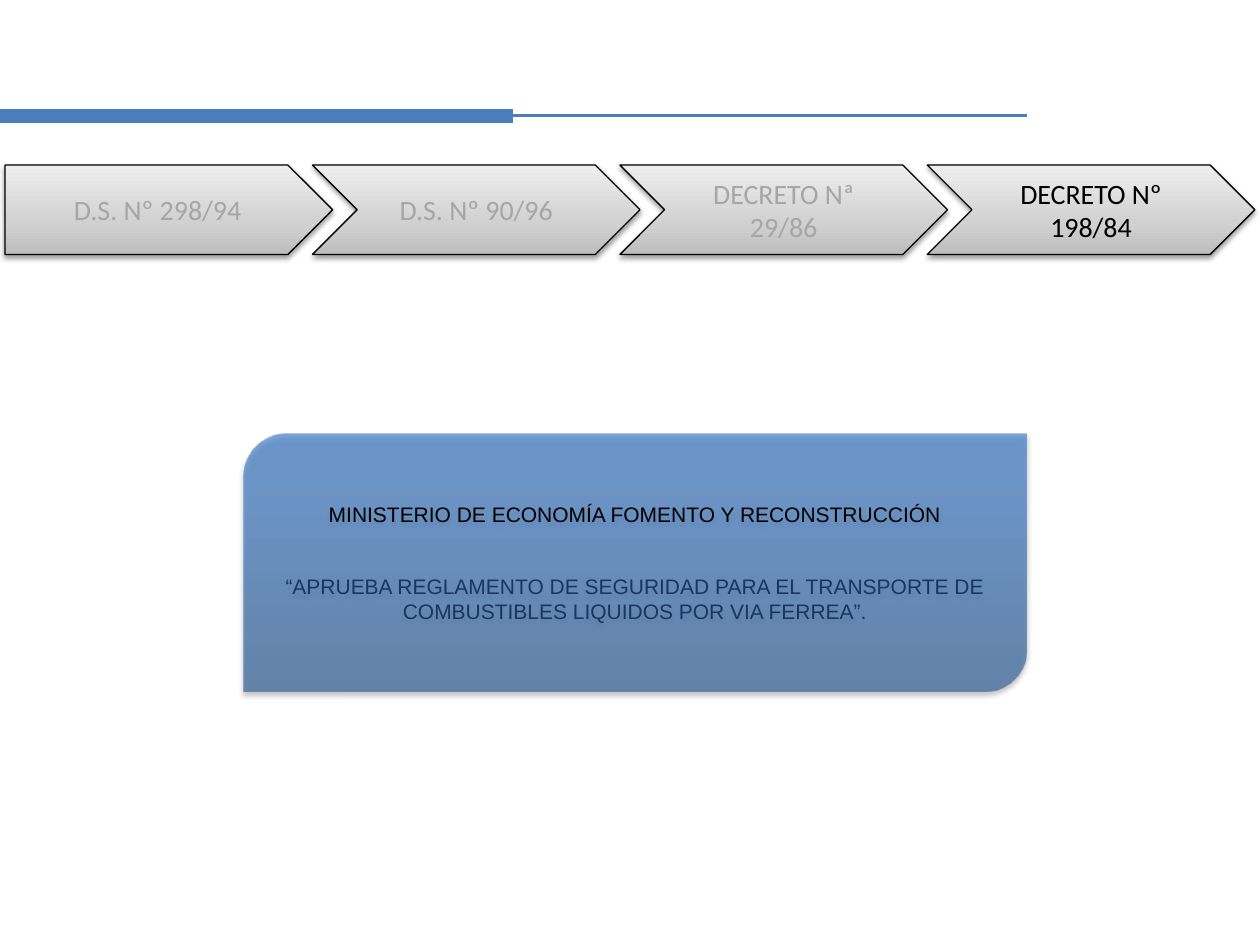
from lxml.etree import SubElement
from pptx import Presentation
from pptx.dml.color import RGBColor
from pptx.enum.shapes import MSO_CONNECTOR as Connector, MSO_SHAPE as Shape
from pptx.enum.text import MSO_ANCHOR as Anchor, PP_ALIGN as Align
from pptx.oxml.ns import qn
from pptx.util import Emu, Inches, Pt

BLACK = RGBColor(0x00, 0x00, 0x00)
MUTED = RGBColor(0xA6, 0xA6, 0xA6)
NAVY = RGBColor(0x17, 0x37, 0x5E)
RULE_BLUE = RGBColor(0x4B, 0x7E, 0xBC)
GREY_STOPS = [
    (0, RGBColor(0xBD, 0xBD, 0xBD)),
    (35, RGBColor(0xD1, 0xD1, 0xD1)),
    (100, RGBColor(0xEE, 0xEE, 0xEE)),
]
BLUE_STOPS = [
    (0, RGBColor(0x2F, 0x5F, 0x99)),
    (80, RGBColor(0x3D, 0x7C, 0xC7)),
    (100, RGBColor(0x3A, 0x7C, 0xCB)),
]

RULE_TOP, RULE_END = 0.92, 8.15
STEP_LEFT, STEP_TOP, STEP_PITCH = 0.04, 1.31, 2.44
STEP_WIDTH, STEP_HEIGHT = 2.6, 0.71
STEPS = ["D.S. Nº 298/94", "D.S. Nº 90/96", "DECRETO Nª 29/86", "DECRETO Nº 198/84"]
CARD = (1.93, 3.44, 6.22, 2.05)
CARD_TEXT = [
    ("MINISTERIO DE ECONOMÍA FOMENTO Y RECONSTRUCCIÓN", BLACK),
    ("“APRUEBA REGLAMENTO DE SEGURIDAD PARA EL TRANSPORTE DE "
     "COMBUSTIBLES LIQUIDOS POR VIA FERREA”.", NAVY),
]


def add_color(parent, color, alpha):
    node = SubElement(parent, qn("a:srgbClr"), val=str(color))
    if alpha < 100:
        SubElement(node, qn("a:alpha"), val=str(alpha * 1000))


def fill_upward(shape, stops, alpha=100):
    shape.fill.gradient()
    gradient = shape._element.spPr.find(qn("a:gradFill"))
    for child in list(gradient):
        gradient.remove(child)
    stop_list = SubElement(gradient, qn("a:gsLst"))
    for position, color in stops:
        stop = SubElement(stop_list, qn("a:gs"), pos=str(position * 1000))
        add_color(stop, color, alpha)
    SubElement(gradient, qn("a:lin"), ang=str(270 * 60000), scaled="0")


def drop_shadow(shape, alpha, blur, distance):
    shape.shadow.inherit = False
    effects = shape._element.spPr.find(qn("a:effectLst"))
    shadow = SubElement(
        effects, qn("a:outerShdw"), blurRad=str(Pt(blur)), dist=str(Pt(distance)),
        dir=str(90 * 60000), rotWithShape="0")
    add_color(shadow, BLACK, alpha)


def write_centered(shape, lines, font, size, gap=0):
    frame = shape.text_frame
    frame.word_wrap = True
    frame.vertical_anchor = Anchor.MIDDLE
    frame.text = "\n".join(text for text, color in lines)
    for index, (para, (text, color)) in enumerate(zip(frame.paragraphs, lines)):
        para.alignment = Align.CENTER
        para.space_before = Pt(gap if index else 0)
        span = para.runs[0]
        span.font.name = font
        span.font.size = Pt(size)
        span.font.color.rgb = color


def add_rule(page, end, weight):
    rule = page.shapes.add_connector(
        Connector.STRAIGHT, Emu(0), Inches(RULE_TOP), Inches(end), Inches(RULE_TOP))
    rule.line.color.rgb = RULE_BLUE
    rule.line.width = Pt(weight)
    SubElement(rule._element.spPr, qn("a:effectLst"))


def add_step(page, column, label, color):
    kind = Shape.CHEVRON if column else Shape.PENTAGON
    left = STEP_LEFT + column * STEP_PITCH
    step = page.shapes.add_shape(
        kind, *map(Inches, (left, STEP_TOP, STEP_WIDTH, STEP_HEIGHT)))
    fill_upward(step, GREY_STOPS)
    step.line.color.rgb = BLACK
    step.line.width = Pt(0.75)
    drop_shadow(step, 38, 3.1, 1.6)
    write_centered(step, [(label, color)], "Calibri", 16)


def add_card(page):
    card = page.shapes.add_shape(Shape.ROUND_2_DIAG_RECTANGLE, *map(Inches, CARD))
    fill_upward(card, BLUE_STOPS, 65)
    card.line.fill.background()
    drop_shadow(card, 35, 3.1, 1.8)
    write_centered(card, CARD_TEXT, "Arial", 12, gap=27)


def main():
    deck = Presentation()
    deck.slide_width, deck.slide_height = Inches(10), Inches(7.5)
    page = deck.slides.add_slide(deck.slide_layouts[6])
    add_rule(page, RULE_END, 1.75)
    add_rule(page, RULE_END / 2, 8)
    for column, label in enumerate(STEPS):
        add_step(page, column, label, BLACK if label == STEPS[-1] else MUTED)
    add_card(page)
    deck.save("out.pptx")


if __name__ == "__main__":
    main()
